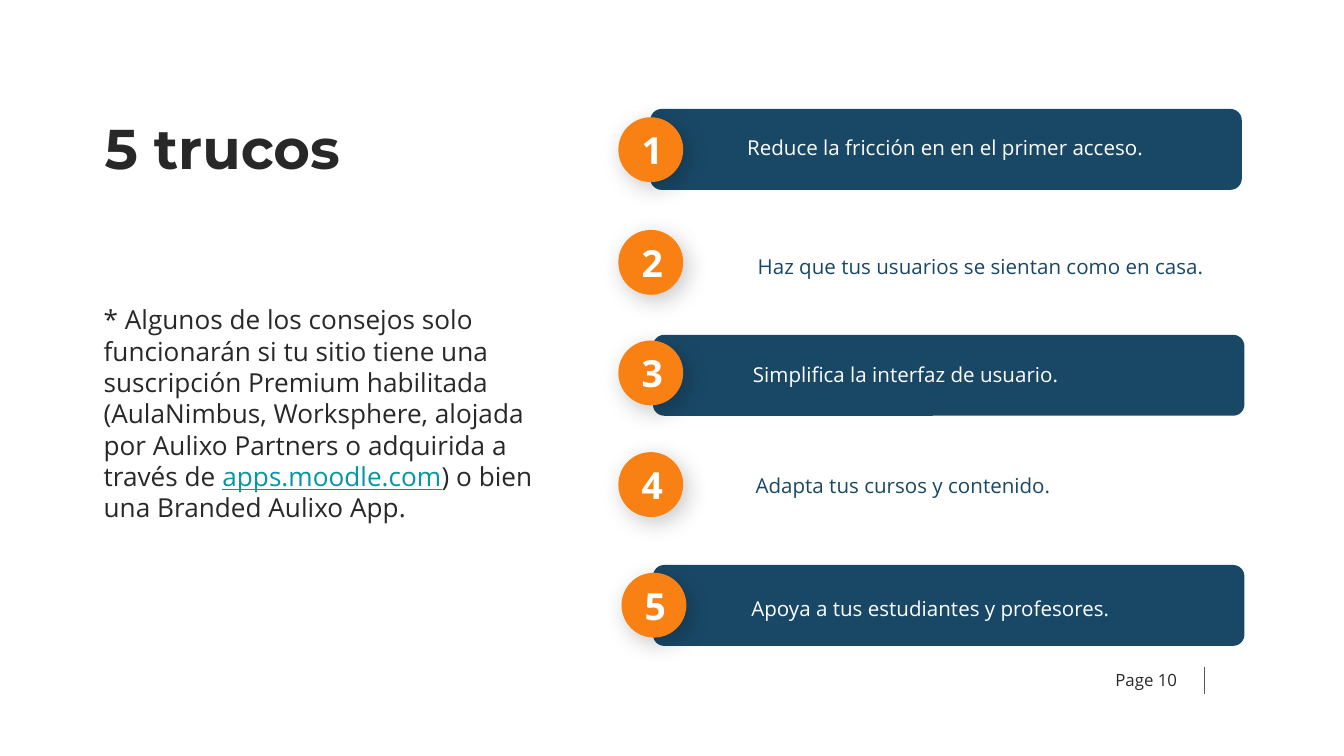
from lxml import etree
from pptx import Presentation
from pptx import util as u
from pptx.dml.color import RGBColor
from pptx.enum import shapes, text
from pptx.oxml import ns

COLORS = {
    "ink": "282828", "navy": "194866", "white": "FFFFFF",
    "orange": "F98012", "link": "0097A7", "rule": "595959",
}
A = ns.nsdecls("a")


def style(r, size, color, font="Open Sans", bold=False):
    r.font.size, r.font.name, r.font.bold = u.Pt(size), font, bold
    r.font.color.rgb = RGBColor.from_string(COLORS[color])


def add_text(x, y, w, h, words, size, color, font="Open Sans", bold=False):
    sp = s.shapes.add_textbox(u.Cm(x), u.Cm(y), u.Cm(w), u.Cm(h))
    tf = sp.text_frame
    tf.word_wrap = True
    tf.margin_left = tf.margin_right = tf.margin_top = tf.margin_bottom = u.Cm(0.25)
    tf.text = words
    style(tf.paragraphs[0].runs[0], size, color, font, bold)
    return tf


prs = Presentation()
prs.slide_width, prs.slide_height = u.Cm(25.4), u.Cm(14.29)
s = prs.slides.add_slide(prs.slide_layouts[6])

# Page number and rule
tf = add_text(20.83, 12.31, 2.06, 1.09, "Page 10", 9, "ink")
tf.vertical_anchor = text.MSO_ANCHOR.MIDDLE
ln = s.shapes.add_connector(shapes.MSO_CONNECTOR.STRAIGHT,
                            u.Cm(22.76), u.Cm(12.6), u.Cm(22.76), u.Cm(13.11))
ln.line.color.rgb = RGBColor.from_string(COLORS["rule"])
ln.line.width = u.Pt(0.75)
etree.SubElement(ln._element.spPr, ns.qn("a:effectLst"))

# Title and note
add_text(1.73, 1.89, 6.83, 1.83, "5 trucos", 30, "ink", "Montserrat", True)
tf = add_text(1.71, 5.49, 8.99, 6.12,
              "* Algunos de los consejos solo funcionarán si tu sitio tiene una "
              "suscripción Premium habilitada (AulaNimbus, Worksphere, alojada "
              "por Aulixo Partners o adquirida a través de ", 14, "ink")
p = tf.paragraphs[0]
for words, color in [("apps.moodle.com", "link"),
                     (") o bien una Branded Aulixo App.", "ink")]:
    r = p.add_run()
    r.text = words
    style(r, 14, color)
    r.font.underline = color == "link"

# Tips: bar left, bar top, text left, text top, circle left, circle top, wording
tips = [
    (12.29, 2.06, 13.87, 2.32, 11.7, 2.23, "Reduce la fricción en en el primer acceso."),
    (12.29, 4.22, 14.07, 4.56, 11.7, 4.36, "Haz que tus usuarios se sientan como en casa."),
    (12.34, 6.33, 13.98, 6.6, 11.7, 6.45, "Simplifica la interfaz de usuario."),
    (12.27, 8.36, 14.03, 8.71, 11.7, 8.56, "Adapta tus cursos y contenido."),
    (12.34, 10.68, 13.95, 11.03, 11.76, 10.84, "Apoya a tus estudiantes y profesores."),
]
for i, (bar_x, bar_y, text_x, text_y, _, _, words) in enumerate(tips):
    fill, ink = ("white", "navy") if i % 2 else ("navy", "white")
    sp = s.shapes.add_shape(shapes.MSO_SHAPE.ROUNDED_RECTANGLE,
                            u.Cm(bar_x), u.Cm(bar_y), u.Cm(11.18), u.Cm(1.53))
    sp.adjustments[0] = 0.14
    sp.shadow.inherit = False
    sp.fill.solid()
    sp.fill.fore_color.rgb = RGBColor.from_string(COLORS[fill])
    sp.line.fill.background()
    add_text(text_x, text_y, 9.07, 1.2, words, 11, ink)

# Numbered circles with a soft shadow
for number, (_, _, _, _, x, y, _) in enumerate(tips, 1):
    sp = s.shapes.add_shape(shapes.MSO_SHAPE.OVAL, u.Cm(x), u.Cm(y), u.Cm(1.2), u.Cm(1.2))
    sp.fill.solid()
    sp.fill.fore_color.rgb = sp.line.color.rgb = RGBColor.from_string(COLORS["orange"])
    sp.line.width = u.Pt(0.75)
    sp._element.spPr.append(etree.fromstring(
        f'<a:effectLst {A}><a:outerShdw blurRad="{u.Pt(12.4)}" dist="{u.Pt(3.8)}" '
        'dir="3300000" algn="bl" rotWithShape="0"><a:srgbClr val="000000">'
        '<a:alpha val="22000"/></a:srgbClr></a:outerShdw></a:effectLst>'))
    tf = sp.text_frame
    tf.margin_left = tf.margin_right = tf.margin_top = tf.margin_bottom = u.Cm(0.25)
    tf.vertical_anchor = text.MSO_ANCHOR.MIDDLE
    tf.text = str(number)
    tf.paragraphs[0].alignment = text.PP_ALIGN.CENTER
    style(tf.paragraphs[0].runs[0], 20, "white", bold=True)

prs.save("out.pptx")
